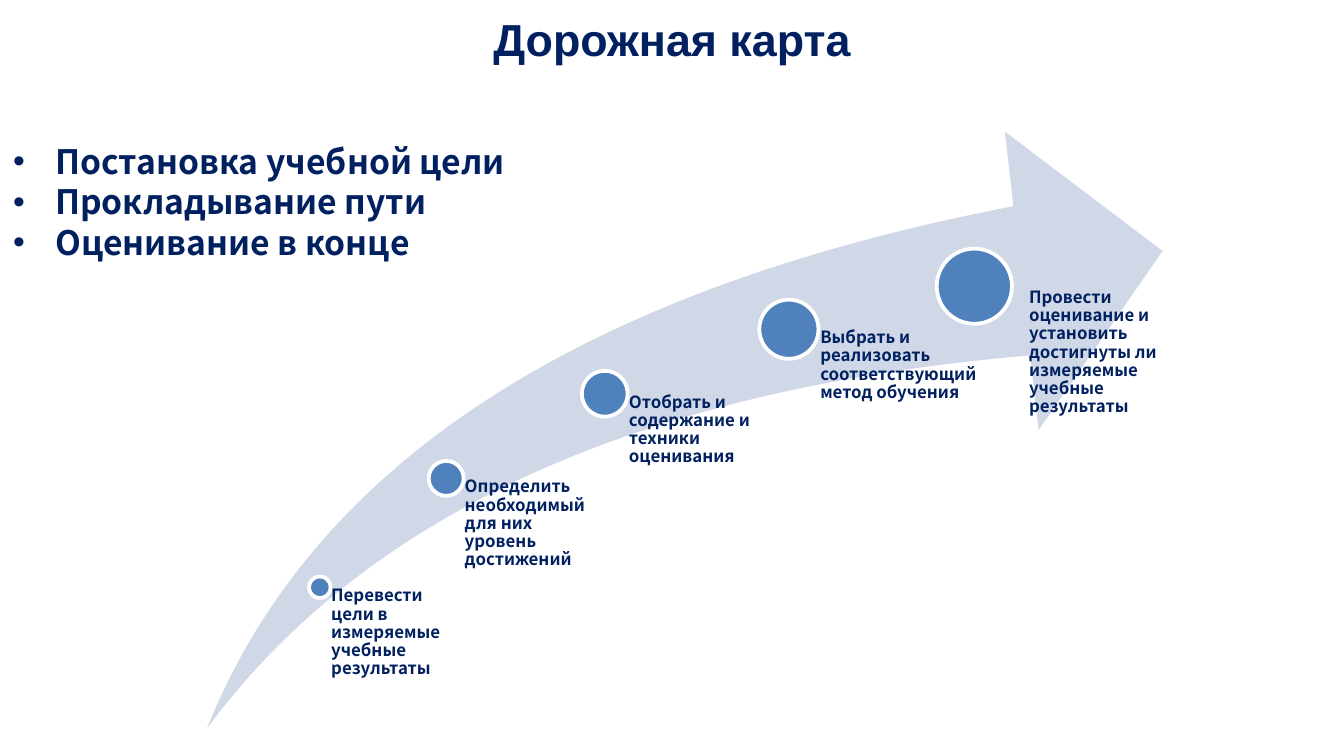
import pptx
import pptx.dml.color
import pptx.enum.shapes
import pptx.enum.text
import pptx.oxml
import pptx.oxml.ns
import pptx.util

Inches = pptx.util.Inches
Pt = pptx.util.Pt
Shape = pptx.enum.shapes.MSO_SHAPE
Align = pptx.enum.text.PP_ALIGN
Anchor = pptx.enum.text.MSO_ANCHOR
AutoSize = pptx.enum.text.MSO_AUTO_SIZE

COLOURS = {"navy": "002060", "pale": "D0D8E8", "blue": "4F81BD", "white": "FFFFFF"}
BODY_FONT = "Noto Sans CJK KR"
SLIDE_WIDTH = 10


class RoadmapSlide:
    def __init__(self, slide):
        self.slide = slide

    def colour(self, key):
        return pptx.dml.color.RGBColor.from_string(COLOURS[key])

    def text(self, box, lines, size, font=BODY_FONT, insets=(0, 0, 0, 0),
             bulleted=False, frame_format=None, paragraph_format=None):
        frame = self.slide.shapes.add_textbox(*map(Inches, box)).text_frame
        sides = ("margin_left", "margin_top", "margin_right", "margin_bottom")
        margins = dict(zip(sides, map(Inches, insets)))
        frame_values = {"word_wrap": True, "vertical_anchor": Anchor.TOP}
        for key, value in {**frame_values, **margins, **(frame_format or {})}.items():
            setattr(frame, key, value)
        frame.text = "\n".join(lines)
        for paragraph in frame.paragraphs:
            if bulleted:
                self.bullet(paragraph)
            for key, value in (paragraph_format or {}).items():
                setattr(paragraph, key, value)
            run_font = paragraph.runs[0].font
            for key, value in {"name": font, "size": Pt(size), "bold": True}.items():
                setattr(run_font, key, value)
            run_font.color.rgb = self.colour("navy")

    def bullet(self, paragraph):
        properties = paragraph._p.get_or_add_pPr()
        indent = Pt(22.5)
        properties.set("marL", str(indent))
        properties.set("indent", str(-indent))
        namespace = pptx.oxml.ns.nsdecls("a")
        for element in ('<a:buFont {} typeface="Arial"/>', '<a:buChar {} char="•"/>'):
            properties.append(pptx.oxml.parse_xml(element.format(namespace)))

    def shape(self, preset, box, fill, line=None, adjustments=()):
        shape = self.slide.shapes.add_shape(preset, *map(Inches, box))
        shape.shadow.inherit = False
        shape.fill.solid()
        shape.fill.fore_color.rgb = self.colour(fill)
        for index, value in enumerate(adjustments):
            shape.adjustments[index] = value
        if line:
            shape.line.color.rgb = self.colour(line)
            shape.line.width = Pt(2)
        else:
            shape.line.fill.background()

    def milestone(self, centre, diameter, label_at, label_width, label):
        left, top = (value - diameter / 2 for value in centre)
        self.shape(Shape.OVAL, (left, top, diameter, diameter), "blue", "white")
        label_left, label_top = label_at
        self.text((label_left, label_top, label_width, 5.42 - label_top), [label], 9,
                  insets=(0.53 * diameter, 0, 0, 0),
                  paragraph_format={"line_spacing": 0.9})


def main():
    presentation = pptx.Presentation()
    presentation.slide_width = Inches(SLIDE_WIDTH)
    presentation.slide_height = Inches(SLIDE_WIDTH * 9 / 16)
    roadmap = RoadmapSlide(presentation.slides.add_slide(presentation.slide_layouts[6]))

    roadmap.text((0, 0, SLIDE_WIDTH, 0.97), ["Дорожная карта"], 24, font="Arial",
                 insets=(0.1, 0.09, 0.1, 0.05),
                 paragraph_format={"alignment": Align.CENTER})
    roadmap.shape(Shape.SWOOSH_ARROW, (1.54, 0.98, 7.11, 4.44), "pale",
                  adjustments=(0.25, 0.25))

    milestones = [
        ((2.38, 4.37), 0.16, (2.38, 4.37), 0.93,
         "Перевести цели в измеряемые учебные результаты"),
        ((3.32, 3.56), 0.26, (3.32, 3.56), 1.18,
         "Определить необходимый для них уровень достижений"),
        ((4.5, 2.93), 0.34, (4.5, 2.93), 1.37,
         "Отобрать и содержание и техники оценивания"),
        ((5.87, 2.45), 0.44, (5.87, 2.45), 1.42,
         "Выбрать и реализовать соответствующий метод обучения"),
        ((7.25, 2.13), 0.56, (7.36, 2.15), 1.42,
         "Провести оценивание и установить достигнуты ли измеряемые учебные результаты"),
    ]
    for milestone in milestones:
        roadmap.milestone(*milestone)

    goals = ["Постановка учебной цели", "Прокладывание пути", "Оценивание в конце"]
    roadmap.text((0, 1, 5, 1.01), goals, 18, insets=(0.1, 0.05, 0.1, 0.05), bulleted=True,
                 frame_format={"auto_size": AutoSize.SHAPE_TO_FIT_TEXT})
    presentation.save("out.pptx")


if __name__ == "__main__":
    main()
